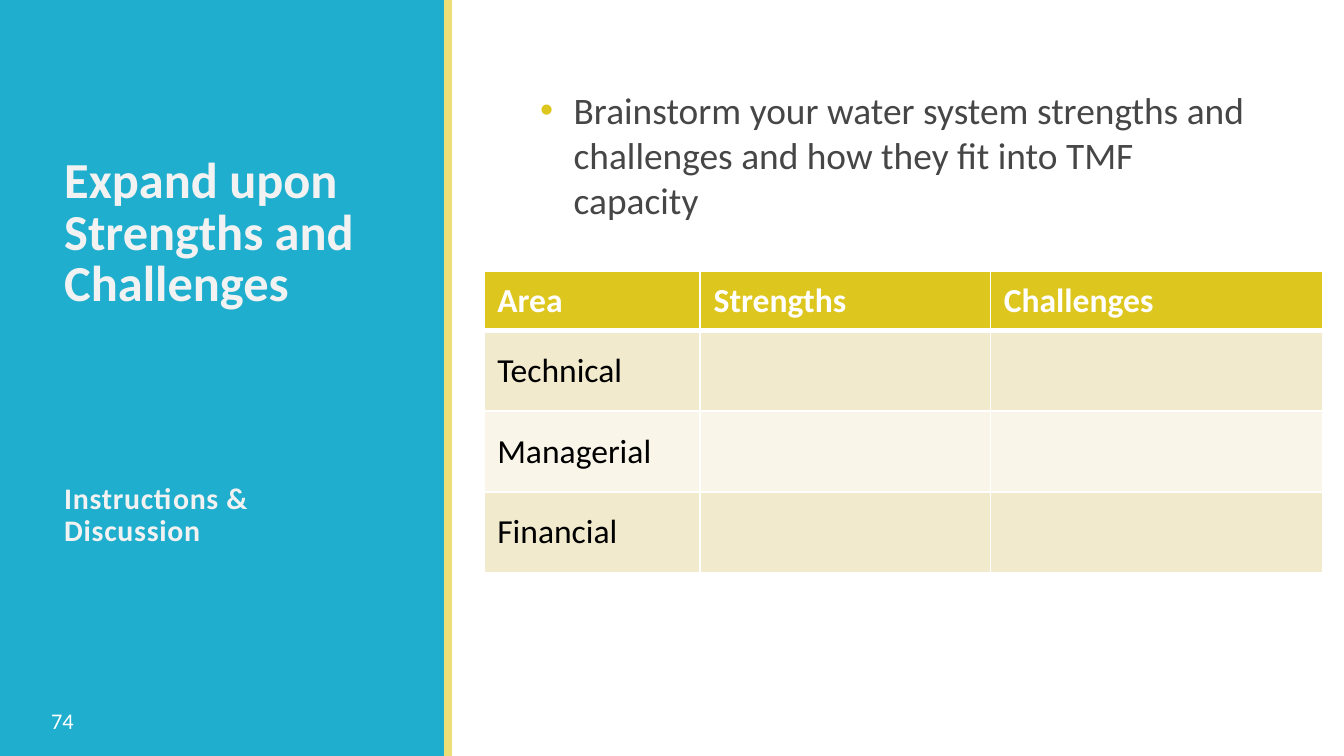
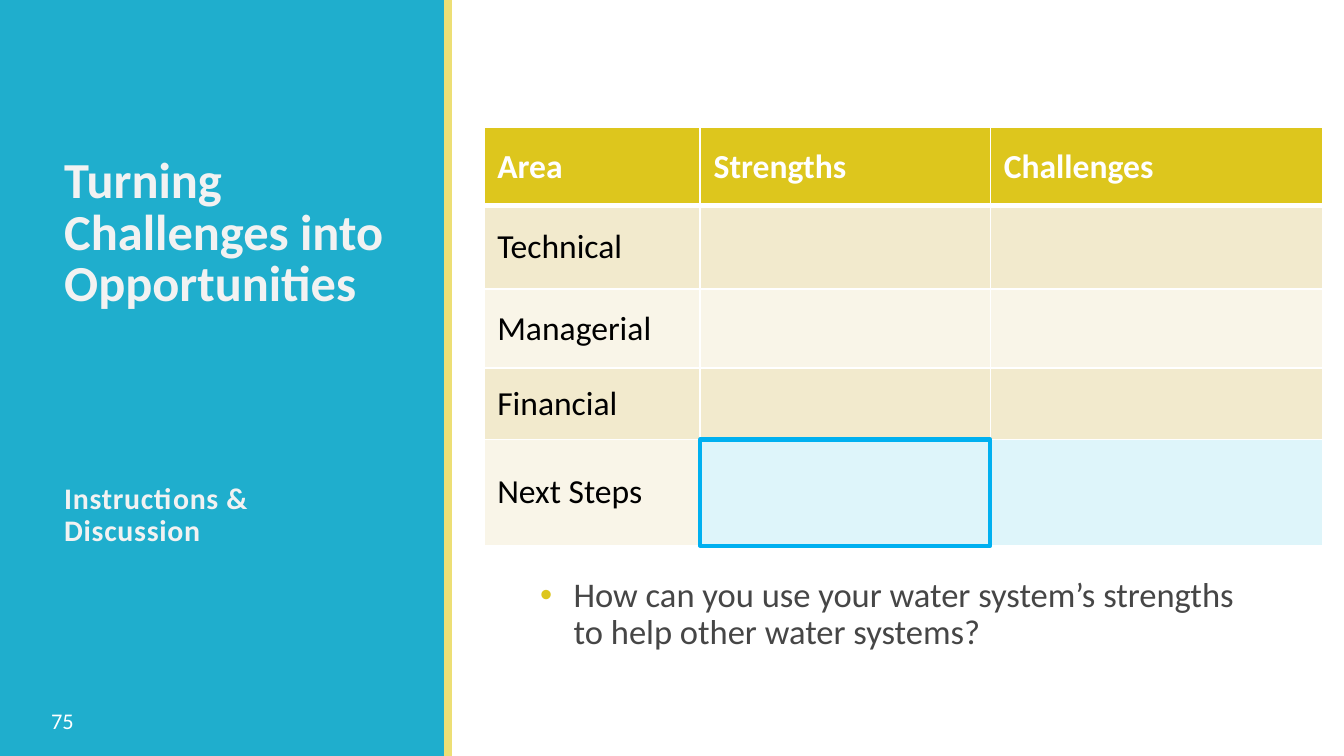
from lxml.etree import SubElement
from pptx import Presentation
from pptx.dml.color import RGBColor
from pptx.enum.shapes import MSO_SHAPE as Shape
from pptx.enum.text import MSO_ANCHOR as Anchor, PP_ALIGN as Align
from pptx.oxml.ns import qn
from pptx.util import Inches, Pt

# Colours and font
FONT = "Calibri"
TEAL = RGBColor(0x1F, 0xAE, 0xCD)
STRAW = RGBColor(0xED, 0xDF, 0x75)
GOLD = RGBColor(0xDD, 0xC6, 0x1D)
SAND = RGBColor(0xF2, 0xEA, 0xCD)
CREAM = RGBColor(0xF9, 0xF5, 0xE8)
ICE = RGBColor(0xDE, 0xF5, 0xFA)
BLUE = RGBColor(0x00, 0xB0, 0xF0)
PALE = RGBColor(0xF2, 0xF2, 0xF2)
GREY = RGBColor(0x46, 0x46, 0x46)
WHITE = RGBColor(0xFF, 0xFF, 0xFF)
BLACK = RGBColor(0, 0, 0)

# Content
HEAD = ["Area", "Strengths", "Challenges"]
AREAS = ["Technical", "Managerial", "Financial"]
NEXT = "Next Steps"
LABEL = "Instructions & Discussion"
SLIDES = [
    dict(title="Expand upon Strengths and Challenges", page=74,
         areas=AREAS, top=2.02, rows=[0.44, 0.6, 0.6, 0.6],
         point="Brainstorm your water system strengths and challenges "
               "and how they fit into TMF capacity",
         place=0.6, size=20, lead=1.0),
    dict(title="Turning Challenges into Opportunities", page=75,
         areas=AREAS + [NEXT], top=0.95, rows=[0.58, 0.62, 0.59, 0.53, 0.79],
         point="How can you use your water system’s strengths "
               "to help other water systems?",
         place=4.25, size=18.5, lead=0.9),
]

# Layout in inches
WIDE = 10
HIGH = WIDE * 9 / 16
BAND, STRIPE = 3.32, 0.05
SIDE, SIDE_W = 0.38, 2.6
BODY, BODY_W, BODY_END = 3.92, 5.61, 5.11
GRID, COLS = 3.6, [1.61, 2.16, 2.47]


def style(para, size, color, bold=False):
    font = para.font
    font.name, font.size, font.bold = FONT, Pt(size), bold
    font.color.rgb = color


def add_rect(slide, x, y, w, h, fill, line, width=1):
    box = slide.shapes.add_shape(Shape.RECTANGLE, *map(Inches, (x, y, w, h)))
    box.shadow.inherit = False
    if fill is None:
        box.fill.background()
    else:
        box.fill.solid()
        box.fill.fore_color.rgb = fill
    box.line.color.rgb = line
    box.line.width = Pt(width)


def add_text(slide, x, y, w, h, text, size, color, bold=False,
             anchor=Anchor.TOP, lead=1.0, bullet=False):
    frame = slide.shapes.add_textbox(*map(Inches, (x, y, w, h))).text_frame
    frame.word_wrap, frame.vertical_anchor = True, anchor
    para = frame.paragraphs[0]
    para.text, para.line_spacing = text, lead
    if bullet:
        frame.margin_right = Inches(0.2)
        props = para._p.get_or_add_pPr()
        props.set("marL", str(Inches(0.25)))
        props.set("indent", str(-Inches(0.25)))
        tint = SubElement(props, qn("a:buClr"))
        SubElement(tint, qn("a:srgbClr"), val=str(GOLD))
        SubElement(props, qn("a:buFont"), typeface="Arial")
        SubElement(props, qn("a:buChar"), char="•")
        para.space_after = Pt(6)
    style(para, size, color, bold)
    return para


def add_edges(cell, row):
    props = cell._tc.get_or_add_tcPr()
    thick = {0: "B", 1: "T"}.get(row)
    for side in "LRTB":
        width = Pt(3 if side == thick else 1)
        edge = SubElement(props, qn(f"a:ln{side}"), w=str(width))
        fill = SubElement(edge, qn("a:solidFill"))
        SubElement(fill, qn("a:srgbClr"), val=str(WHITE))


def cell_fill(row, col, area):
    if row == 0:
        return GOLD
    if area == NEXT and col:
        return ICE
    return SAND if row % 2 else CREAM


def add_grid(slide, areas, top, rows):
    cells = [HEAD] + [[area, "", ""] for area in areas]
    table = slide.shapes.add_table(
        len(rows), len(COLS), Inches(GRID), Inches(top),
        Inches(sum(COLS)), Inches(sum(rows))).table
    table.horz_banding = False
    for col, width in zip(table.columns, COLS):
        col.width = Inches(width)
    for r, height in enumerate(rows):
        table.rows[r].height = Inches(height)
        for c, text in enumerate(cells[r]):
            cell = table.cell(r, c)
            cell.text, cell.vertical_anchor = text, Anchor.MIDDLE
            add_edges(cell, r)
            cell.fill.solid()
            cell.fill.fore_color.rgb = cell_fill(r, c, cells[r][0])
            style(cell.text_frame.paragraphs[0], 18,
                  BLACK if r else WHITE, r == 0)


def add_side(slide, title, page):
    add_rect(slide, 0, 0, BAND, HIGH, TEAL, TEAL)
    add_rect(slide, BAND - 0.01, 0, STRIPE, HIGH, STRAW, STRAW)
    add_text(slide, SIDE, 0.49, SIDE_W, 1.88, title, 27, PALE, True,
             Anchor.BOTTOM, 0.85)
    label = add_text(slide, SIDE, 3.55, SIDE_W, 1.64, LABEL, 16, PALE, True,
                     lead=0.9)
    label.runs[0]._r.get_or_add_rPr().set("spc", "40")
    number = add_text(slide, 0.11, 5.21, 0.71, 0.3, str(page), 12, WHITE,
                      anchor=Anchor.MIDDLE)
    number.alignment = Align.CENTER


def main():
    deck = Presentation()
    deck.slide_width, deck.slide_height = Inches(WIDE), Inches(HIGH)
    for item in SLIDES:
        slide = deck.slides.add_slide(deck.slide_layouts[6])
        top, rows, place = item["top"], item["rows"], item["place"]
        add_side(slide, item["title"], item["page"])
        add_grid(slide, item["areas"], top, rows)
        add_text(slide, BODY, place, BODY_W, BODY_END - place, item["point"],
                 item["size"], GREY, lead=item["lead"], bullet=True)
        # Frame the strengths cell of the next steps
        if NEXT in item["areas"]:
            add_rect(slide, GRID + COLS[0], top + sum(rows[:-1]),
                     COLS[1], rows[-1], None, BLUE, 2.25)
    deck.save("out.pptx")


if __name__ == "__main__":
    main()
